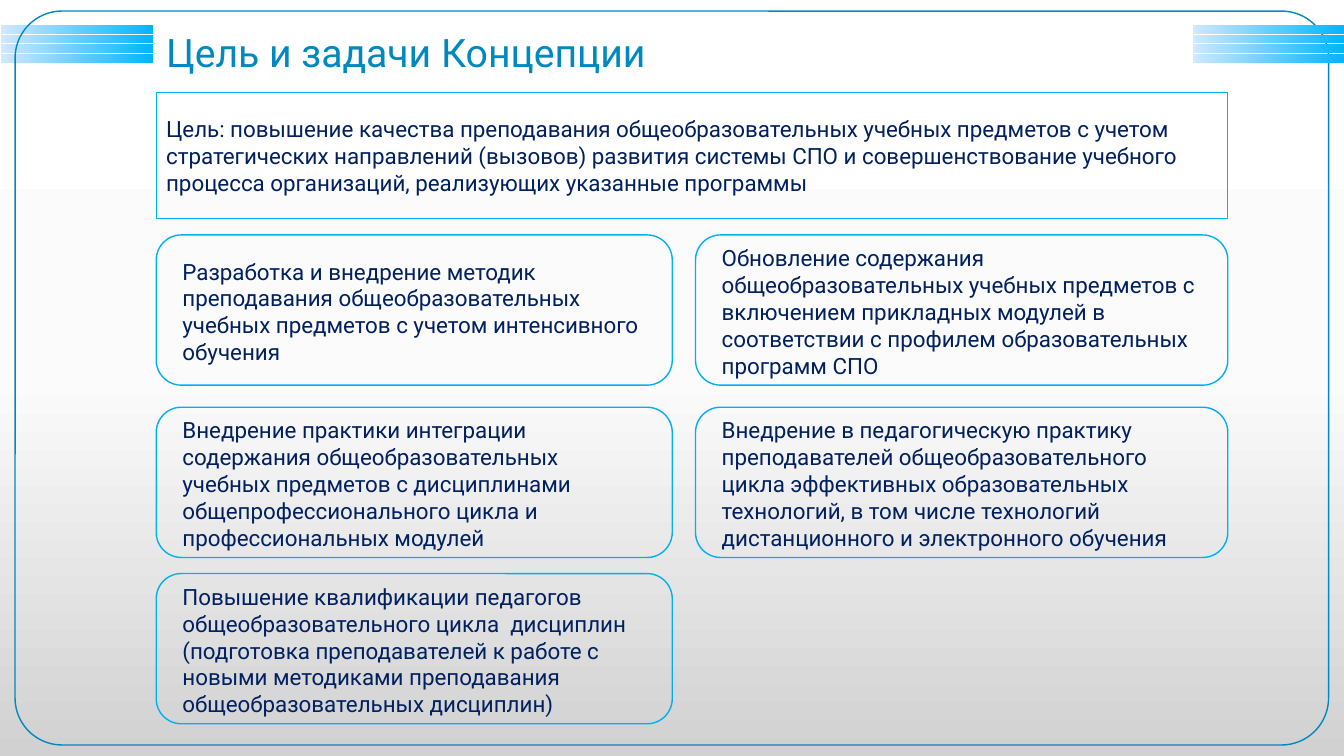
from copy import deepcopy

from pptx import Presentation
from pptx.dml.color import RGBColor
from pptx.enum.shapes import MSO_SHAPE as Shape
from pptx.enum.text import MSO_ANCHOR as Anchor, PP_ALIGN as Align
from pptx.oxml.ns import qn
from pptx.util import Pt

COLORS = {
    "title": "0088BF", "border": "00B0F0", "text": "002060",
    "stripe_from": "D1E8FF", "stripe_to": "00B5FF",
    "back_top": "FFFFFF", "back_middle": "FBFBFB", "back_bottom": "D1D1D1",
}
RGB = {name: RGBColor.from_string(value) for name, value in COLORS.items()}
FONT = "Roboto"

prs = Presentation()
prs.slide_width, prs.slide_height = Pt(960), Pt(540)
slide = prs.slides.add_slide(prs.slide_layouts[6])


def add_stripes(left):
    """Draw four thin gradient bars below one another at a slide edge."""
    for row in range(4):
        stripe = slide.shapes.add_shape(
            Shape.RECTANGLE, Pt(left), Pt(18 + 6.9 * row), Pt(108.7), Pt(6))
        stripe.shadow.inherit = False
        stripe.line.fill.background()
        stripe.fill.gradient()
        stripe.fill.gradient_angle = 0
        for stop, name in zip(stripe.fill.gradient_stops, ("stripe_from", "stripe_to")):
            stop.color.rgb = RGB[name]


def add_panel(kind, left, top, width, height, border, text="", size=16, color="text"):
    """Draw an unfilled shape with left-aligned text; border may be None."""
    panel = slide.shapes.add_shape(kind, Pt(left), Pt(top), Pt(width), Pt(height))
    panel.shadow.inherit = False
    panel.fill.background()
    if border:
        panel.line.color.rgb = RGB[border]
        panel.line.width = Pt(1)
    else:
        panel.line.fill.background()
    frame = panel.text_frame
    frame.word_wrap = True
    frame.vertical_anchor = Anchor.MIDDLE
    frame.text = text
    paragraph = frame.paragraphs[0]
    paragraph.alignment = Align.LEFT
    paragraph.font.name = FONT
    for run in paragraph.runs:
        run.font.name = FONT
        run.font.size = Pt(size)
        run.font.color.rgb = RGB[color]
    return panel


# Background: three-stop vertical gradient
backdrop = slide.background.fill
backdrop.gradient()
backdrop.gradient_angle = 270
stop_list = next(slide.element.iter(qn("a:gsLst")))
stop_list.insert(1, deepcopy(stop_list[0]))
for position, (stop_xml, name) in enumerate(
        zip(stop_list, ("back_top", "back_middle", "back_bottom"))):
    stop_xml.set("pos", str(position * 50000))
    backdrop.gradient_stops[position].color.rgb = RGB[name]

# Border with stripes at both top corners
add_stripes(0.7)
border_frame = add_panel(Shape.ROUNDED_RECTANGLE, 10.8, 7.9, 938.2, 524.2, "title")
border_frame.adjustments[0] = 0.064
add_stripes(851.8)

# Title and goal
LEFT = 111.6
add_panel(Shape.RECTANGLE, LEFT, 8.6, 646.6, 57.6, None,
          "Цель и задачи Концепции", 28, "title")
add_panel(Shape.RECTANGLE, LEFT, 66.2, 765.4, 90, "border",
          "Цель: повышение качества преподавания общеобразовательных учебных "
          "предметов с учетом стратегических направлений (вызовов) развития "
          "системы СПО и совершенствование учебного процесса организаций, "
          "реализующих указанные программы")

# Tasks, filled row by row
columns = [(LEFT, 368.6), (496.8, 380.2)]
row_tops = [167.8, 290.9, 409.7]
tasks = [
    "Разработка и внедрение методик преподавания общеобразовательных учебных "
    "предметов с учетом интенсивного обучения",
    "Обновление содержания общеобразовательных учебных предметов с включением "
    "прикладных модулей в соответствии с профилем образовательных программ СПО",
    "Внедрение практики интеграции содержания общеобразовательных учебных "
    "предметов с дисциплинами общепрофессионального цикла и профессиональных модулей",
    "Внедрение в педагогическую практику преподавателей общеобразовательного "
    "цикла эффективных образовательных технологий, в том числе технологий "
    "дистанционного и электронного обучения",
    "Повышение квалификации педагогов общеобразовательного цикла  дисциплин "
    "(подготовка преподавателей к работе с новыми методиками преподавания "
    "общеобразовательных дисциплин)",
]
for index, task in enumerate(tasks):
    row, column = divmod(index, 2)
    left, width = columns[column]
    card = add_panel(Shape.ROUNDED_RECTANGLE, left, row_tops[row], width, 107.3,
                     "border", task)
    card.text_frame.margin_left = card.text_frame.margin_right = Pt(13.5)
    card.text_frame.margin_top, card.text_frame.margin_bottom = Pt(2), Pt(0)

prs.save("out.pptx")
